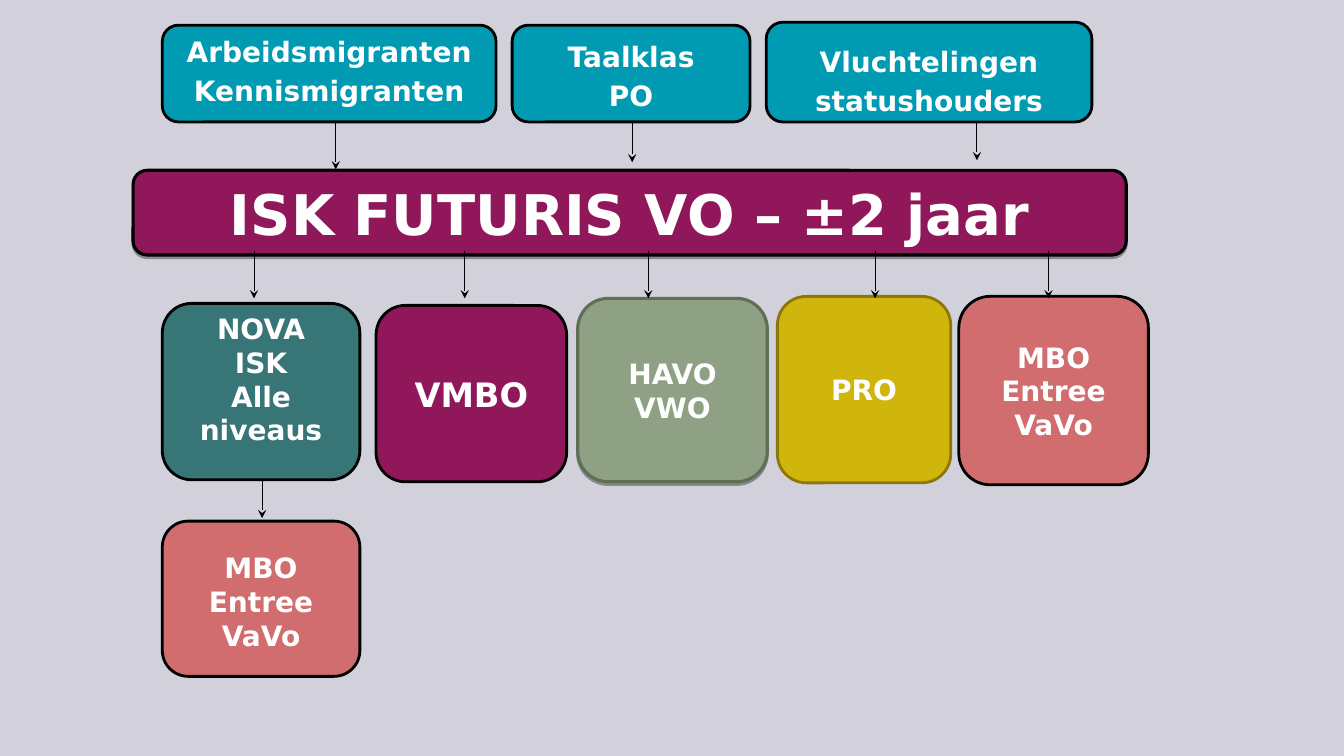
from lxml import etree
from pptx import Presentation
from pptx.dml.color import RGBColor
from pptx.enum.shapes import MSO_CONNECTOR, MSO_SHAPE
from pptx.enum.text import MSO_ANCHOR as ANCHOR, MSO_AUTO_SIZE, PP_ALIGN
from pptx.oxml.ns import qn
from pptx.util import Inches, Pt

BACKDROP = RGBColor(0xD2, 0xD1, 0xDB)
BLACK = RGBColor(0, 0, 0)
WHITE = RGBColor(0xFF, 0xFF, 0xFF)
BLUE = RGBColor(0x00, 0x9B, 0xB3)
PLUM = RGBColor(0x90, 0x17, 0x5A)
TEAL = RGBColor(0x38, 0x75, 0x76)
SAGE = RGBColor(0x8F, 0xA1, 0x84)
DARK_SAGE = RGBColor(0x5E, 0x6F, 0x54)
GOLD = RGBColor(0xD0, 0xB5, 0x0C)
DARK_GOLD = RGBColor(0x8B, 0x78, 0x08)
CORAL = RGBColor(0xD2, 0x6D, 0x6F)
FONT = "DejaVu Sans"


def write(frame, text, size, anchor=ANCHOR.MIDDLE, spacing=1.0):
    """Set centred bold white text, one paragraph per line."""
    frame.text = text
    frame.word_wrap = True
    frame.auto_size = MSO_AUTO_SIZE.NONE
    frame.vertical_anchor = anchor
    frame.margin_top = frame.margin_bottom = 0
    for paragraph in frame.paragraphs:
        paragraph.alignment = PP_ALIGN.CENTER
        paragraph.line_spacing = spacing
        for run in paragraph.runs:
            run.font.name = FONT
            run.font.size = Pt(size)
            run.font.bold = True
            run.font.color.rgb = WHITE


def add_box(slide, left, top, width, height, fill, line=BLACK, weight=2):
    box = slide.shapes.add_shape(
        MSO_SHAPE.FLOWCHART_ALTERNATE_PROCESS,
        Inches(left), Inches(top), Inches(width), Inches(height))
    box.shadow.inherit = False
    box.fill.solid()
    box.fill.fore_color.rgb = fill
    box.line.color.rgb = line
    box.line.width = Pt(weight)
    return box


def add_drop_shadow(box):
    effects = box._element.spPr.find(qn("a:effectLst"))
    shadow = etree.SubElement(effects, qn("a:outerShdw"), dist=str(Pt(1.8)),
                              dir="5400000", rotWithShape="0")
    color = etree.SubElement(shadow, qn("a:srgbClr"), val="000000")
    etree.SubElement(color, qn("a:alpha"), val="35000")


def add_arrow(slide, x, top, length=0.47):
    arrow = slide.shapes.add_connector(
        MSO_CONNECTOR.STRAIGHT, Inches(x), Inches(top), Inches(x), Inches(top + length))
    arrow.line.color.rgb = BLACK
    arrow.line.width = Pt(0.75)
    etree.SubElement(arrow.line._get_or_add_ln(), qn("a:tailEnd"), type="stealth")
    etree.SubElement(arrow._element.spPr, qn("a:effectLst"))


def add_school_bar(slide, left, top, width, height):
    """The title on its coloured bar."""
    title = slide.shapes.title
    bar = add_box(slide, left, top, width, height, PLUM, weight=2.25)
    add_drop_shadow(bar)
    title._element.addprevious(bar._element)
    title.left, title.top = Inches(left), Inches(top)
    title.width, title.height = Inches(width), Inches(height)
    write(title.text_frame, "ISK FUTURIS VO – ±2 jaar", 40)


def add_origins(slide, left, top):
    """Groups that enter the school, each with an arrow down."""
    origins = [
        # text, x, y, width, height, anchor, arrow x, arrow y
        ("Arbeidsmigranten\nKennismigranten", 0, 0.03, 3.31, 0.96, ANCHOR.TOP, 1.72, 0.99),
        ("Taalklas\nPO", 3.47, 0.03, 2.36, 0.96, ANCHOR.MIDDLE, 4.66, 0.92),
        ("Vluchtelingen\nstatushouders", 5.99, 0, 3.23, 0.99, ANCHOR.BOTTOM, 8.08, 0.9),
    ]
    for text, x, y, width, height, anchor, arrow_x, arrow_y in origins:
        add_arrow(slide, left + arrow_x, top + arrow_y)
        box = add_box(slide, left + x, top + y, width, height, BLUE)
        write(box.text_frame, text, 20, anchor, spacing=1.15)


def add_destinations(slide, left, top):
    """Follow-up schools, each reached by an arrow from the bar."""
    destinations = [
        # text, x, y, width, height, fill, line, size, anchor, arrow x
        ("NOVA\nISK\nAlle niveaus", 0, 0.07, 1.96, 1.75, TEAL, BLACK, 20, ANCHOR.TOP, 0.91),
        ("VMBO", 2.12, 0.09, 1.89, 1.75, PLUM, BLACK, 24, ANCHOR.MIDDLE, 3),
        ("HAVO\nVWO", 4.12, 0.02, 1.88, 1.82, SAGE, DARK_SAGE, 20, ANCHOR.MIDDLE, 4.82),
        ("PRO", 6.1, 0, 1.72, 1.85, GOLD, DARK_GOLD, 20, ANCHOR.MIDDLE, 7.07),
        ("MBO\nEntree\nVaVo", 7.9, 0, 1.88, 1.87, CORAL, BLACK, 20, ANCHOR.MIDDLE, 8.79),
    ]
    for text, x, y, width, height, fill, line, size, anchor, arrow_x in destinations:
        box = add_box(slide, left + x, top + y, width, height, fill, line)
        write(box.text_frame, text, size, anchor)
        if fill == SAGE:
            box.line.width = Pt(2.25)
            add_drop_shadow(box)
        add_arrow(slide, left + arrow_x, top - 0.45)


def add_next_step(slide, left, top):
    """The step after NOVA ISK."""
    box = add_box(slide, left, top, 1.96, 1.54, CORAL)
    write(box.text_frame, "MBO\nEntree\nVaVo", 20)
    box.text_frame.margin_top = Inches(0.05)
    add_arrow(slide, left + 0.99, top - 0.41, 0.38)


def main():
    prs = Presentation()
    prs.slide_width, prs.slide_height = Inches(13.33), Inches(7.5)
    slide = prs.slides.add_slide(prs.slide_layouts[5])
    slide.background.fill.solid()
    slide.background.fill.fore_color.rgb = BACKDROP

    add_school_bar(slide, 1.32, 1.69, 9.85, 0.84)
    add_origins(slide, 1.61, 0.22)
    add_destinations(slide, 1.61, 2.94)
    add_next_step(slide, 1.61, 5.17)
    prs.save("out.pptx")


if __name__ == "__main__":
    main()
